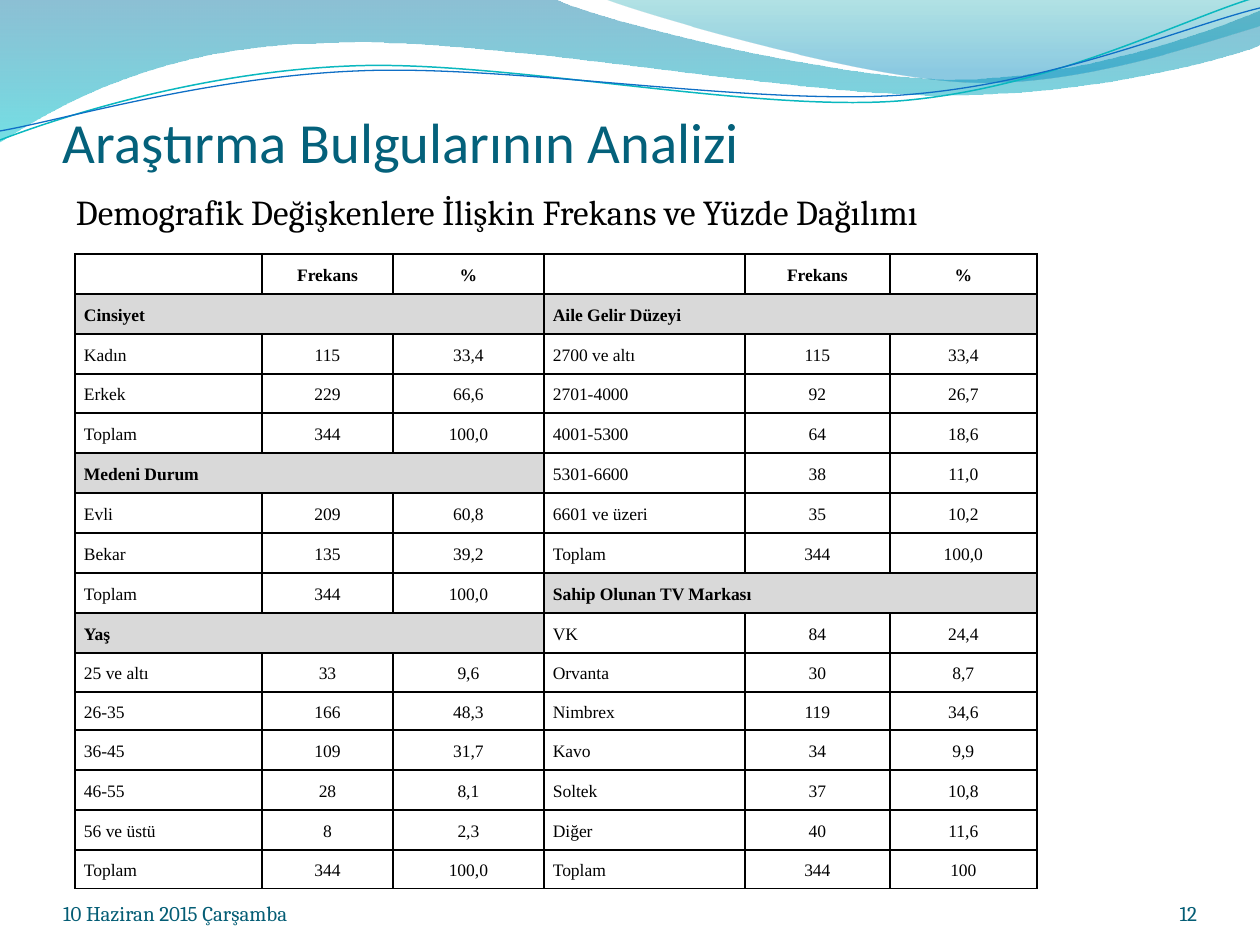
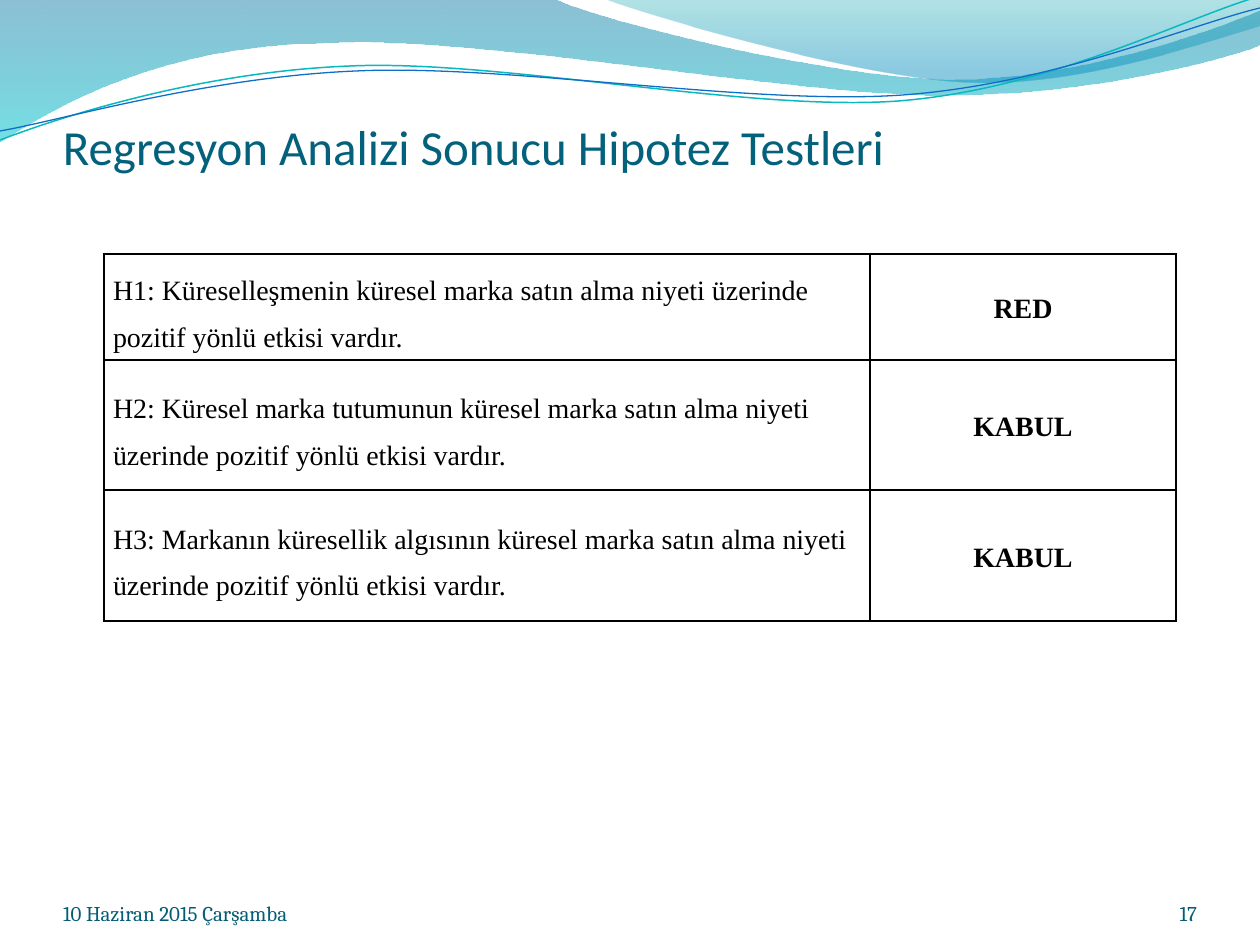
"""Builds two survey result slides that share a wave header and a dated footer."""
import lxml.etree
import pptx
import pptx.dml.color
import pptx.enum.text
import pptx.oxml.ns
import pptx.util

SCALE = 914400 / 126
ALIGN = pptx.enum.text.PP_ALIGN
ANCHOR = pptx.enum.text.MSO_ANCHOR
INK, TITLE, FOOTER, GROUP_FILL = "000000", "04617B", "045D75", "D9D9D9"
TITLE_FONT, BODY_FONT, TABLE_FONT = "Calibri", "Cambria", "Times New Roman"

BANDS = [
    ([(0, 0), (554, -1), (600, 21, 837, 79, 955, 79), (1075, 79, 1207, 33, 1260, 11),
      (1261, 45), (1239, 55, 1096, 96, 940, 95), (784, 95, 481, 35, 324, 43),
      (163, 45, 58, 105, -1, 142)],
     [(0, "0074A1", 45), (1, "00C6CF", 55)]),
    ([(604, -1), (641, 14, 859, 78, 969, 82), (1079, 87, 1211, 40, 1260, 26), (1260, 0)],
     [(0, "00A1A9", 30), (0.8, "008BBF", 45)]),
]
STRANDS = [
    ([(0, 140), (60, 117, 199, 72, 349, 66), (498, 59, 747, 112, 898, 101),
      (1050, 89, 1182, 19, 1257, -3)], "0AB8BF", 0.85),
    ([(0, 131), (59, 121, 207, 77, 357, 71), (508, 64, 752, 106, 903, 95),
      (1053, 84, 1186, 26, 1260, 8)], "0F6FC6", 0.75),
]

LEFT_GROUPS = [
    ("", "Frekans", "%"),
    ("Cinsiyet",), ("Kadın", "115", "33,4"), ("Erkek", "229", "66,6"), ("Toplam", "344", "100,0"),
    ("Medeni Durum",), ("Evli", "209", "60,8"), ("Bekar", "135", "39,2"), ("Toplam", "344", "100,0"),
    ("Yaş",), ("25 ve altı", "33", "9,6"), ("26-35", "166", "48,3"), ("36-45", "109", "31,7"),
    ("46-55", "28", "8,1"), ("56 ve üstü", "8", "2,3"), ("Toplam", "344", "100,0"),
]
RIGHT_GROUPS = [
    ("", "Frekans", "%"),
    ("Aile Gelir Düzeyi",), ("2700 ve altı", "115", "33,4"), ("2701-4000", "92", "26,7"),
    ("4001-5300", "64", "18,6"), ("5301-6600", "38", "11,0"), ("6601 ve üzeri", "35", "10,2"),
    ("Toplam", "344", "100,0"),
    ("Sahip Olunan TV Markası",), ("VK", "84", "24,4"), ("Orvanta", "30", "8,7"),
    ("Nimbrex", "119", "34,6"), ("Kavo", "34", "9,9"), ("Soltek", "37", "10,8"),
    ("Diğer", "40", "11,6"), ("Toplam", "344", "100"),
]
HYPOTHESES = [
    ("H1: Küreselleşmenin küresel marka satın alma niyeti üzerinde pozitif yönlü etkisi vardır.", "RED"),
    ("H2: Küresel marka tutumunun küresel marka satın alma niyeti üzerinde pozitif yönlü etkisi vardır.",
     "KABUL"),
    ("H3: Markanın küresellik algısının küresel marka satın alma niyeti üzerinde pozitif yönlü etkisi "
     "vardır.", "KABUL"),
]


def px(length):
    return pptx.util.Emu(round(length * SCALE))


def color(value):
    return pptx.dml.color.RGBColor.from_string(value)


def add_xml(parent, tag, **attributes):
    return lxml.etree.SubElement(parent, pptx.oxml.ns.qn(tag), attributes)


def write(frame, text, size, font, ink=INK, bold=False, align=ALIGN.LEFT, spacing=None, after=0):
    paragraph = frame.paragraphs[0]
    paragraph.alignment = align
    paragraph.line_spacing = spacing
    paragraph.space_after = pptx.util.Pt(after)
    run = paragraph.add_run()
    run.text = text
    run.font.size = pptx.util.Pt(size)
    run.font.name = font
    run.font.bold = bold
    run.font.color.rgb = color(ink)


class Deck:
    """Holds the shared style and the current slide."""

    def __init__(self):
        self.presentation = pptx.Presentation()
        self.presentation.slide_width = px(1260)
        self.presentation.slide_height = px(945)
        self.slide = None

    def start_slide(self, title, title_size, number):
        self.slide = self.presentation.slides.add_slide(self.presentation.slide_layouts[6])
        for steps, stops in BANDS:
            self.band(steps, stops)
        for steps, ink, width in STRANDS:
            self.strand(steps, ink, width)
        self.text(title, 63, 97, 1134, 78, insets=(0, 6), anchor=ANCHOR.BOTTOM,
                  size=title_size, font=TITLE_FONT, ink=TITLE)
        footer = dict(anchor=ANCHOR.BOTTOM, size=12, font=BODY_FONT, ink=FOOTER)
        self.text("10 Haziran 2015 Çarşamba", 63, 876, 294, 50, **footer)
        self.text(number, 1092, 876, 105, 50, align=ALIGN.RIGHT, **footer)

    def outline(self, steps, close):
        points = [(px(x), px(y)) for step in steps for x, y in zip(step[::2], step[1::2])]
        builder = self.slide.shapes.build_freeform(*points[0], scale=1.0)
        builder.add_line_segments(points[1:], close=close)
        shape = builder.convert_to_shape()
        shape.shadow.inherit = False
        lines = iter(list(shape.element.spPr.iter(pptx.oxml.ns.qn("a:lnTo"))))
        for step in steps[1:]:
            first = next(lines)
            if len(step) == 6:
                curve = add_xml(first.getparent(), "a:cubicBezTo")
                first.addprevious(curve)
                for line in (first, next(lines), next(lines)):
                    curve.append(line[0])
                    line.getparent().remove(line)
        return shape

    def band(self, steps, stops):
        shape = self.outline(steps, close=True)
        shape.line.fill.background()
        shape.fill.gradient()
        shape.fill.gradient_angle = 270
        for stop, (position, ink, _) in zip(shape.fill.gradient_stops, stops):
            stop.position = position
            stop.color.rgb = color(ink)
        inks = shape.element.spPr.iter(pptx.oxml.ns.qn("a:srgbClr"))
        for element, (_, _, opacity) in zip(list(inks), stops):
            add_xml(element, "a:alpha", val=str(opacity * 1000))

    def strand(self, steps, ink, width):
        shape = self.outline(steps, close=False)
        shape.fill.background()
        shape.line.color.rgb = color(ink)
        shape.line.width = pptx.util.Pt(width)

    def text(self, text, left, top, width, height, insets=(0, 0), anchor=ANCHOR.TOP, **style):
        frame = self.slide.shapes.add_textbox(px(left), px(top), px(width), px(height)).text_frame
        frame.word_wrap = True
        frame.vertical_anchor = anchor
        frame.margin_left = frame.margin_right = px(insets[0])
        frame.margin_top, frame.margin_bottom = px(insets[1]), 0
        write(frame, text, **style)

    def table(self, left, top, widths, heights):
        table = self.slide.shapes.add_table(
            len(heights), len(widths), px(left), px(top), px(sum(widths)), px(sum(heights))).table
        table.first_row = table.horz_banding = False
        for column, width in zip(table.columns, widths):
            column.width = px(width)
        for row, height in zip(table.rows, heights):
            row.height = px(height)
            for cell in row.cells:
                self.frame_cell(cell)
        return table

    def frame_cell(self, cell):
        cell.margin_left = cell.margin_right = px(9)
        cell.margin_top = cell.margin_bottom = 0
        cell.vertical_anchor = ANCHOR.MIDDLE
        properties = cell._tc.get_or_add_tcPr()
        for side in ("a:lnL", "a:lnR", "a:lnT", "a:lnB"):
            fill = add_xml(add_xml(properties, side, w="12700"), "a:solidFill")
            add_xml(fill, "a:srgbClr", val=INK)
        cell.fill.background()

    def frequency_half(self, table, first_column, groups):
        style = dict(size=10, font=TABLE_FONT, spacing=1.15, after=6)
        for row, values in enumerate(groups):
            is_group = len(values) == 1
            if is_group:
                heading = table.cell(row, first_column)
                heading.merge(table.cell(row, first_column + 2))
                heading.fill.solid()
                heading.fill.fore_color.rgb = color(GROUP_FILL)
            for offset, value in enumerate(values):
                if value:
                    write(table.cell(row, first_column + offset).text_frame, value,
                          bold=is_group or row == 0,
                          align=ALIGN.CENTER if offset else ALIGN.LEFT, **style)


def main():
    deck = Deck()

    deck.start_slide("Araştırma Bulgularının Analizi", 32.4, "12")
    deck.text("Demografik Değişkenlere İlişkin Frekans ve Yüzde Dağılımı", 63, 184, 1134, 687,
              insets=(13, 6), size=20, font=BODY_FONT)
    row_heights = [40] * 3 + [39] + [40] * 6 + [39, 38] + [40] * 3 + [39]
    frequencies = deck.table(75, 254, [187, 131, 151, 201, 145, 147], row_heights)
    deck.frequency_half(frequencies, 0, LEFT_GROUPS)
    deck.frequency_half(frequencies, 3, RIGHT_GROUPS)

    deck.start_slide("Regresyon Analizi Sonucu Hipotez Testleri", 28, "17")
    results = deck.table(104, 254, [766, 306], [106, 130, 131])
    for row, (hypothesis, verdict) in enumerate(HYPOTHESES):
        write(results.cell(row, 0).text_frame, hypothesis, 16, TABLE_FONT, spacing=1.5, after=6)
        write(results.cell(row, 1).text_frame, verdict, 16, TABLE_FONT, bold=True,
              align=ALIGN.CENTER, spacing=1.15)

    deck.presentation.save("out.pptx")


if __name__ == "__main__":
    main()
